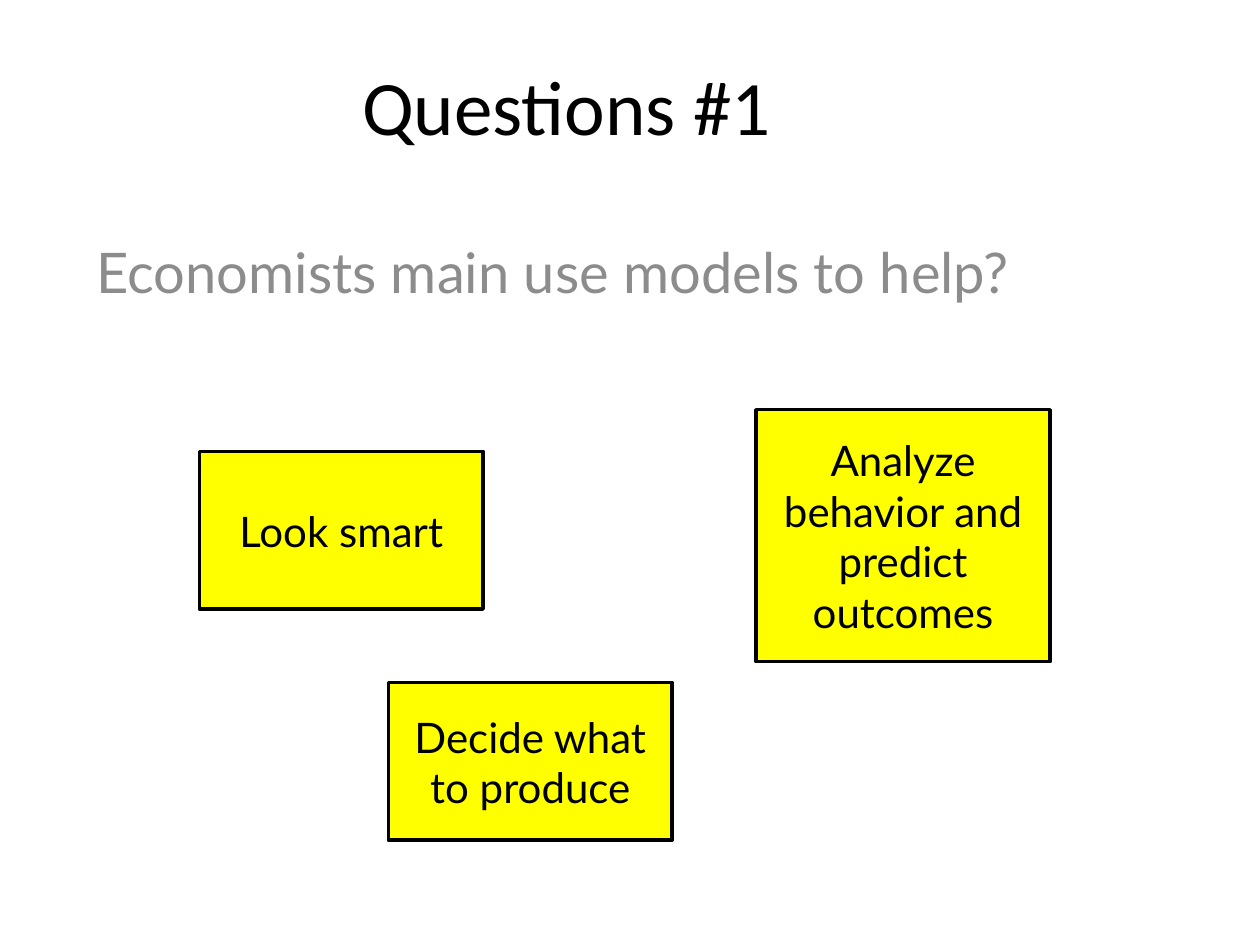
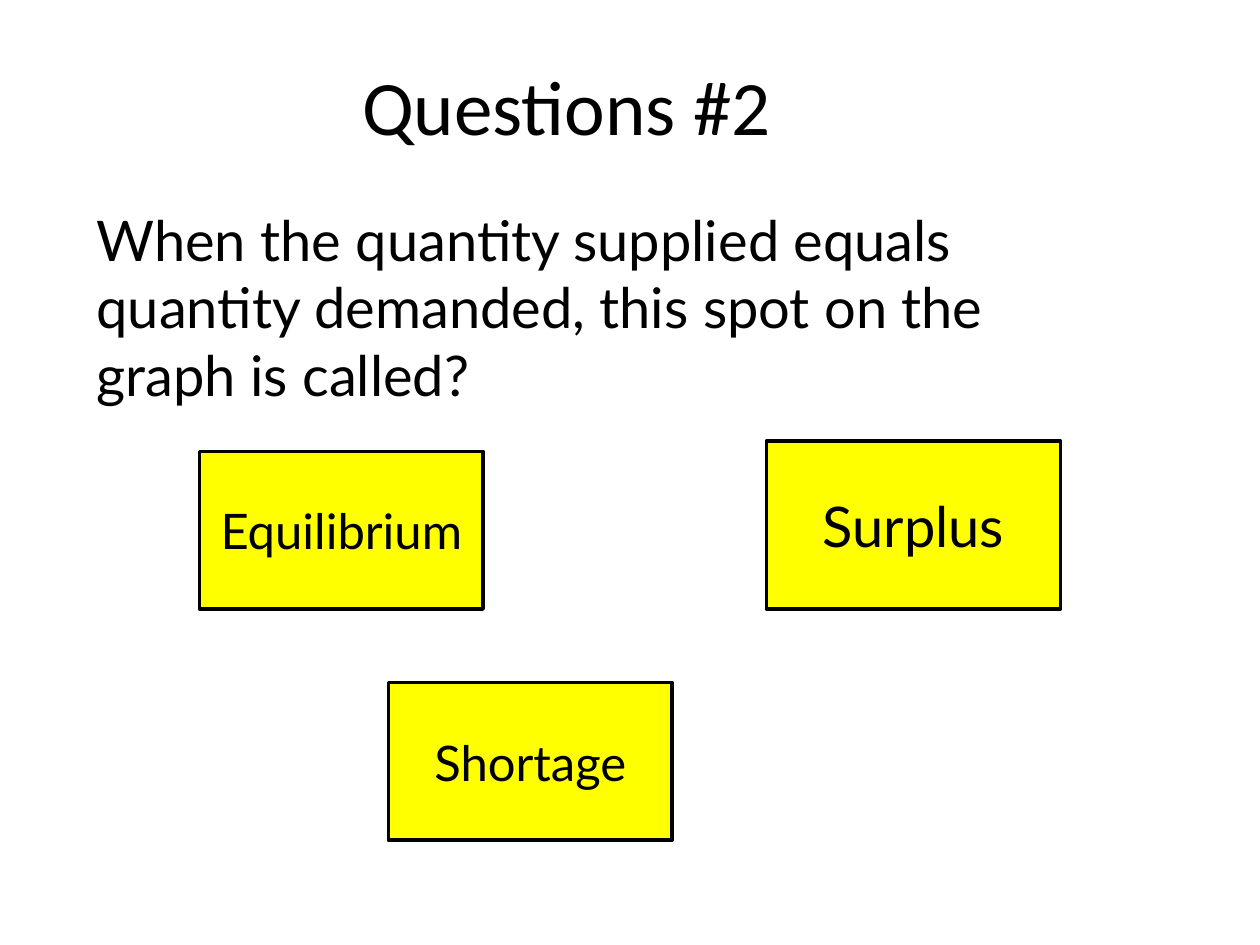
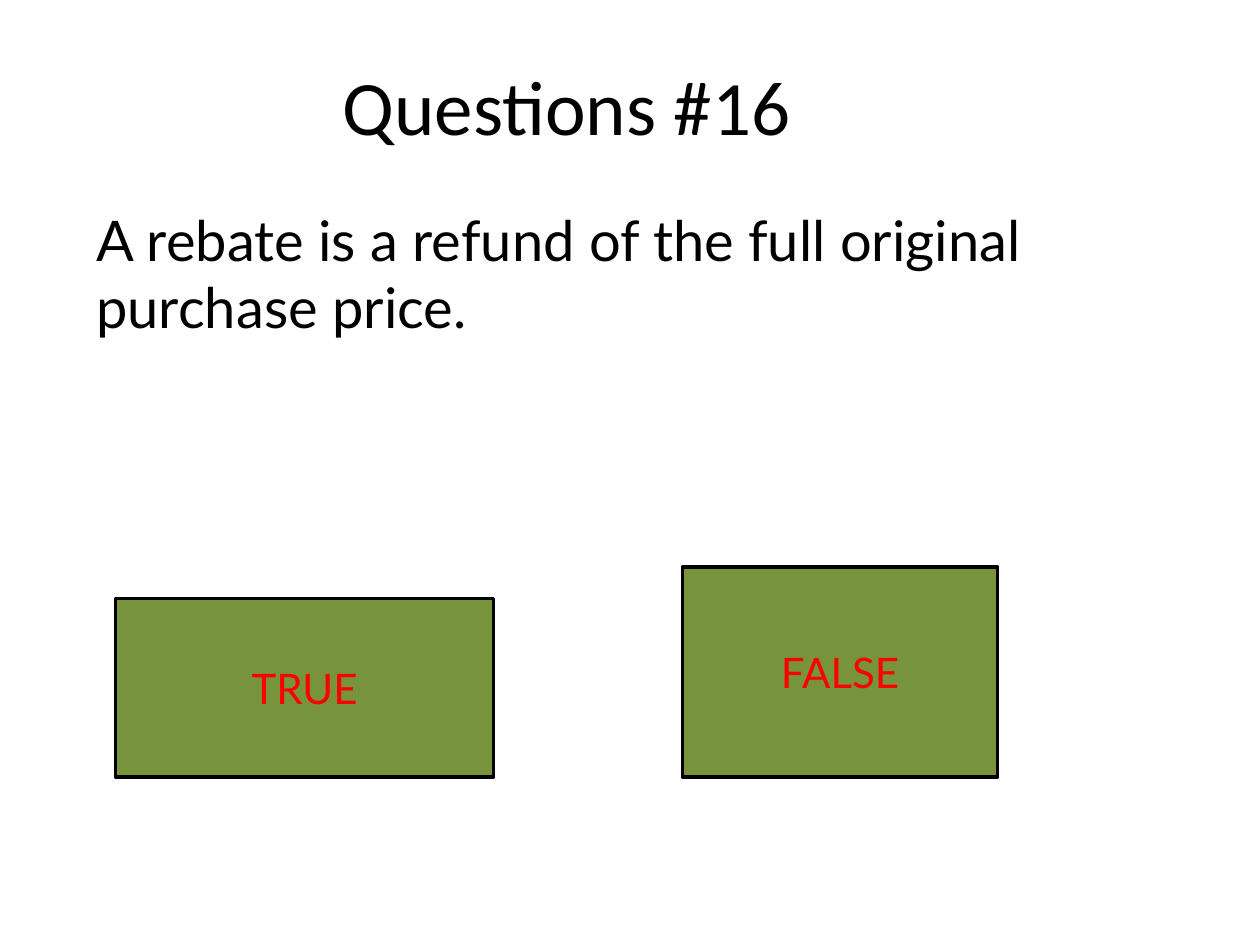
from pptx import Presentation
from pptx.dml.color import RGBColor
from pptx.enum.shapes import MSO_SHAPE
from pptx.enum.text import MSO_ANCHOR, PP_ALIGN
from pptx.util import Cm, Pt

RECT = MSO_SHAPE.RECTANGLE
LEFT, CENTER = PP_ALIGN.LEFT, PP_ALIGN.CENTER
TOP, MIDDLE = MSO_ANCHOR.TOP, MSO_ANCHOR.MIDDLE

TITLE_FONT, BODY_FONT = "Calibri", "Lato"
BLACK, GREY, RED = "000000", "8C8C8C", "FF0000"
YELLOW, GREEN = "FFFF00", "77933C"

TITLE_BOX = (1.9, 1.06, 19.05, 2.12)
LEFT_ANSWER = (4.02, 9.1, 5.72, 3.18)
LOWER_ANSWER = (7.83, 13.76, 5.72, 3.18)


def rgb(color):
    return RGBColor.from_string(color)


def place(sp, box):
    sp.left, sp.top, sp.width, sp.height = map(Cm, box)


def set_text(sp, text, size, color, font=BODY_FONT, align=CENTER, anchor=MIDDLE):
    tf = sp.text_frame
    tf.text = text
    tf.word_wrap = True
    tf.vertical_anchor = anchor
    p = tf.paragraphs[0]
    p.alignment = align
    r = p.runs[0]
    r.font.size = Pt(size)
    r.font.name = font
    r.font.color.rgb = rgb(color)


def add_question(prs, number, question, box, color=BLACK):
    slide = prs.slides.add_slide(prs.slide_layouts[0])
    title, body = slide.placeholders
    place(title, TITLE_BOX)
    set_text(title, f"Questions #{number}", 44, BLACK, font=TITLE_FONT)
    place(body, box)
    set_text(body, question, 32, color, align=LEFT, anchor=TOP)
    return slide


def add_answer(slide, text, box, size=24, fill=YELLOW, color=BLACK):
    sp = slide.shapes.add_shape(RECT, *map(Cm, box))
    sp.shadow.inherit = False
    sp.fill.solid()
    sp.fill.fore_color.rgb = rgb(fill)
    sp.line.color.rgb = rgb(BLACK)
    sp.line.width = Pt(2)
    set_text(sp, text, size, color)


def main():
    prs = Presentation()
    prs.slide_width, prs.slide_height = Cm(25.4), Cm(19.05)

    slide = add_question(prs, 1, "Economists main use models to help?",
                         (1.69, 4.66, 19.9, 3.81), GREY)
    add_answer(slide, "Look smart", LEFT_ANSWER)
    add_answer(slide, "Analyze behavior and predict outcomes",
               (15.24, 8.26, 5.93, 5.08))
    add_answer(slide, "Decide what to produce", LOWER_ANSWER)

    slide = add_question(
        prs, 2,
        "When the quantity supplied equals quantity demanded, "
        "this spot on the graph is called?",
        (1.69, 4.02, 19.9, 4.45))
    add_answer(slide, "Equilibrium", LEFT_ANSWER, 28)
    add_answer(slide, "Surplus", (15.45, 8.89, 5.93, 3.39), 32)
    add_answer(slide, "Shortage", LOWER_ANSWER, 28)

    slide = add_question(
        prs, 16, "A rebate is a refund of the full original purchase price.",
        (1.69, 4.02, 21.59, 3.39))
    add_answer(slide, "TRUE", (2.33, 12.07, 7.62, 3.6), fill=GREEN, color=RED)
    add_answer(slide, "FALSE", (13.76, 11.43, 6.35, 4.24), fill=GREEN, color=RED)

    prs.save("out.pptx")


if __name__ == "__main__":
    main()
